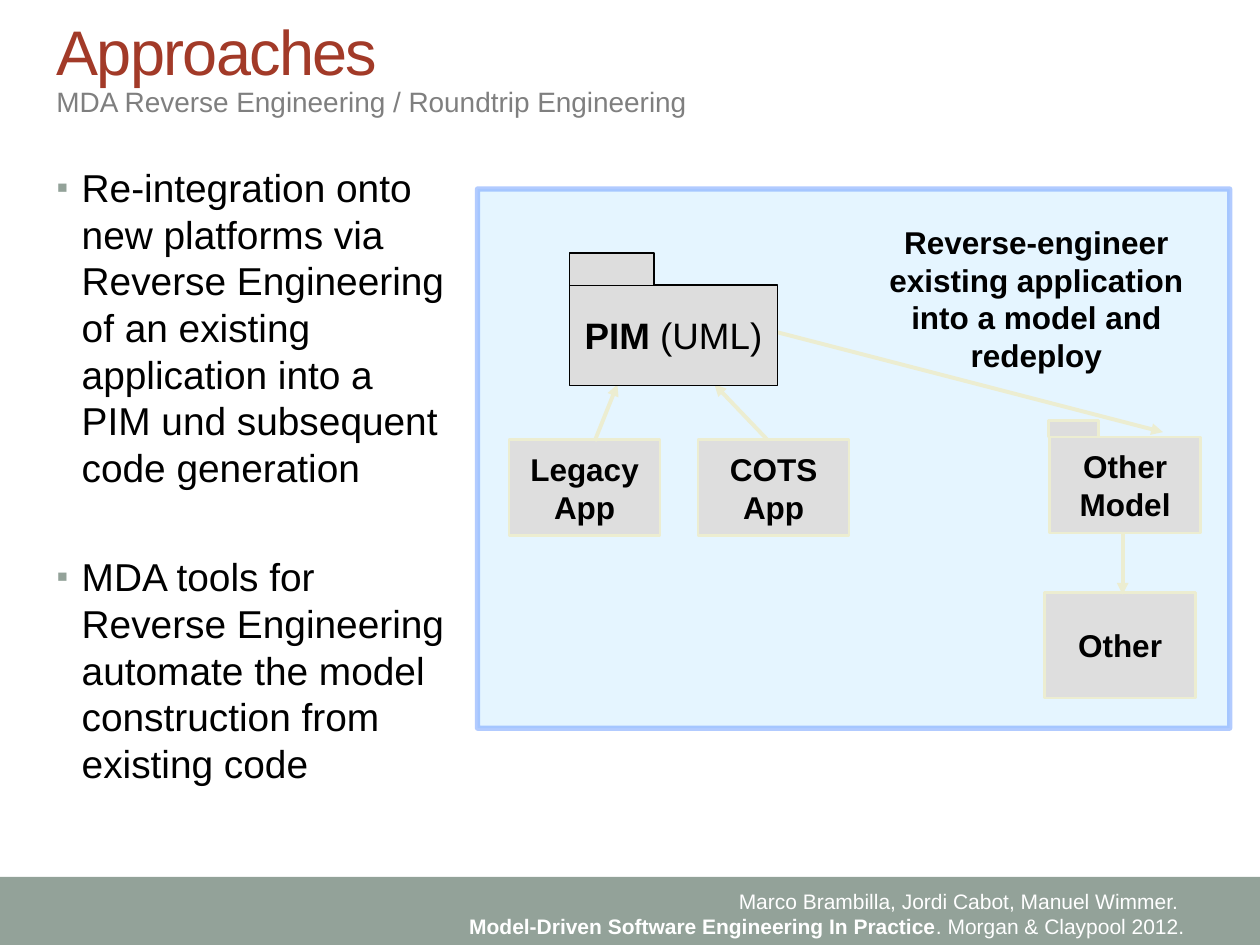
from lxml.etree import SubElement
from pptx import Presentation
from pptx.dml.color import RGBColor
from pptx.enum.shapes import MSO_CONNECTOR, MSO_SHAPE
from pptx.enum.text import MSO_ANCHOR, MSO_AUTO_SIZE, PP_ALIGN
from pptx.oxml.ns import qn
from pptx.util import Inches, Pt

WIDTH, HEIGHT = Inches(10), Inches(7.5)
FONT = "Arial"
BLACK = RGBColor(0x00, 0x00, 0x00)
WHITE = RGBColor(0xFF, 0xFF, 0xFF)
RUST = RGBColor(0xA2, 0x3A, 0x28)
GRAY = RGBColor(0x7F, 0x7F, 0x7F)
SAGE = RGBColor(0x93, 0xA2, 0x99)
SKY = RGBColor(0xCC, 0xEC, 0xFF)
BLUE = RGBColor(0x66, 0x99, 0xFF)
SILVER = RGBColor(0xDE, 0xDE, 0xDE)
FOLDER = RGBColor(0xDD, 0xDD, 0xDD)
CREAM = RGBColor(0xEC, 0xED, 0xD1)


def across(share):
    return round(WIDTH * share / 100)


def down(share):
    return round(HEIGHT * share / 100)


def area(x, y, w, h):
    return across(x), down(y), across(w), down(h)


def add_run(p, text, size, color=BLACK, bold=False):
    r = p.add_run()
    r.text = text
    r.font.name = FONT
    r.font.size = Pt(size)
    r.font.bold = bold
    r.font.color.rgb = color
    return r


def add_lines(tf, lines, size, bold=False):
    for i, line in enumerate(lines):
        p = tf.add_paragraph() if i else tf.paragraphs[0]
        p.alignment = PP_ALIGN.CENTER
        add_run(p, line, size, bold=bold)


def add_text_frame(s, box):
    tf = s.shapes.add_textbox(*area(*box)).text_frame
    tf.word_wrap = True
    return tf


def paint(sp, fill, line=None, width=1.5):
    sp.shadow.inherit = False
    sp.fill.solid()
    sp.fill.fore_color.rgb = fill
    if line is None:
        sp.line.fill.background()
    else:
        sp.line.color.rgb = line
        sp.line.width = Pt(width)


def add_rect(s, box, fill, line=None, width=1.5):
    sp = s.shapes.add_shape(MSO_SHAPE.RECTANGLE, *area(*box))
    paint(sp, fill, line, width)
    tf = sp.text_frame
    tf.word_wrap = False
    tf.vertical_anchor = MSO_ANCHOR.MIDDLE
    tf.paragraphs[0].alignment = PP_ALIGN.CENTER
    return sp


def add_node(s, box, lines):
    sp = add_rect(s, box, SILVER, CREAM)
    add_lines(sp.text_frame, lines, 18, bold=True)


def add_arrow(s, x1, y1, x2, y2):
    c = s.shapes.add_connector(MSO_CONNECTOR.STRAIGHT, across(x1), down(y1),
                               across(x2), down(y2))
    c.line.color.rgb = CREAM
    c.line.width = Pt(2.25)
    SubElement(c.line._get_or_add_ln(), qn("a:tailEnd"), type="triangle")
    SubElement(c._element.spPr, qn("a:effectLst"))


def add_title(s):
    title = s.shapes.title
    title.left, title.top, title.width, title.height = area(3.5, 2.27, 93.3, 6.13)
    tf = title.text_frame
    tf.auto_size = MSO_AUTO_SIZE.NONE
    tf.vertical_anchor = MSO_ANCHOR.MIDDLE
    p = tf.paragraphs[0]
    p.alignment = PP_ALIGN.LEFT
    r = add_run(p, "Approaches", 36, RUST)
    r.font._element.set("spc", "-100")
    subtitle = add_text_frame(s, (3.5, 8.27, 93.3, 5.2))
    add_run(subtitle.paragraphs[0],
            "MDA Reverse Engineering / Roundtrip Engineering", 16, GRAY)


def set_bullet(p):
    pPr = p._p.get_or_add_pPr()
    pPr.set("marL", str(Inches(0.2)))
    pPr.set("indent", str(-Inches(0.2)))
    color = SubElement(pPr, qn("a:buClr"))
    SubElement(color, qn("a:srgbClr"), val=str(SAGE))
    SubElement(pPr, qn("a:buSzPct"), val="85000")
    SubElement(pPr, qn("a:buFont"), typeface=FONT)
    SubElement(pPr, qn("a:buChar"), char="▪")


def add_bullets(s):
    tf = add_text_frame(s, (3.5, 16.67, 33.2, 68.67))
    first = tf.paragraphs[0]
    set_bullet(first)
    add_run(first, "Re-integration onto new platforms via Reverse Engineering of "
            "an existing application into a PIM und subsequent code generation", 22.2)
    second = tf.add_paragraph()
    set_bullet(second)
    second.space_before = Pt(36)
    add_run(second, "MDA tools for ", 22.2)
    second.add_line_break()
    add_run(second, "Reverse Engineering automate the model construction "
            "from existing code", 22.2)


def add_panel(s):
    panel = add_rect(s, (37.9, 20, 59.7, 57.07), SKY, BLUE, 3)
    for color in panel._element.spPr.iter(qn("a:srgbClr")):
        SubElement(color, qn("a:alpha"), val="50000")


def add_pim_folder(s):
    left, top, width, height = 45.2, 30.13, 16.5, 10.67
    folder = add_rect(s, (left, top, width, height), FOLDER, BLACK, 1)
    p = folder.text_frame.paragraphs[0]
    add_run(p, "PIM ", 21, bold=True)
    add_run(p, "(UML)", 21)
    tab_top, tab_right = down(26.8), across(51.9)
    builder = s.shapes.build_freeform(across(left), down(top))
    builder.add_line_segments([(across(left), tab_top), (tab_right, tab_top),
                               (tab_right, down(top))], close=False)
    paint(builder.convert_to_shape(), FOLDER, BLACK, 1)


def add_diagram(s):
    add_panel(s)
    add_node(s, (40.4, 46.53, 12, 10.13), ["Legacy", "App"])
    add_arrow(s, 47.2, 46.67, 49, 40.67)
    add_node(s, (55.4, 46.53, 12, 10.13), ["COTS", "App"])
    add_arrow(s, 60.9, 46.53, 56.7, 40.67)
    add_node(s, (82.9, 62.67, 12, 11.2), ["Other"])
    add_arrow(s, 89.1, 56.27, 89.1, 62.93)
    add_node(s, (83.3, 46.27, 12, 10.13), ["Other", "Model"])
    add_arrow(s, 58.7, 34.13, 92.3, 45.73)
    note = add_text_frame(s, (68.5, 22.93, 27.5, 15.6))
    add_lines(note, ["Reverse-engineer existing application into a model and redeploy"],
              18, bold=True)
    add_pim_folder(s)
    add_rect(s, (83.2, 44.53, 4, 1.73), FOLDER, CREAM)


def add_footer(s):
    add_rect(s, (0, 92.8, 100, 7.2), SAGE)
    tf = add_text_frame(s, (29.4, 93.33, 65.6, 6.67))
    authors, book = tf.paragraphs[0], tf.add_paragraph()
    authors.alignment = book.alignment = PP_ALIGN.RIGHT
    add_run(authors, "Marco Brambilla, Jordi Cabot, Manuel Wimmer. ", 12, WHITE)
    add_run(book, "Model-Driven Software Engineering In Practice", 12, WHITE, bold=True)
    add_run(book, ". Morgan & Claypool 2012.", 12, WHITE)


def main():
    prs = Presentation()
    prs.slide_width, prs.slide_height = WIDTH, HEIGHT
    s = prs.slides.add_slide(prs.slide_layouts[5])
    add_footer(s)
    add_title(s)
    add_bullets(s)
    add_diagram(s)
    prs.save("out.pptx")


if __name__ == "__main__":
    main()
